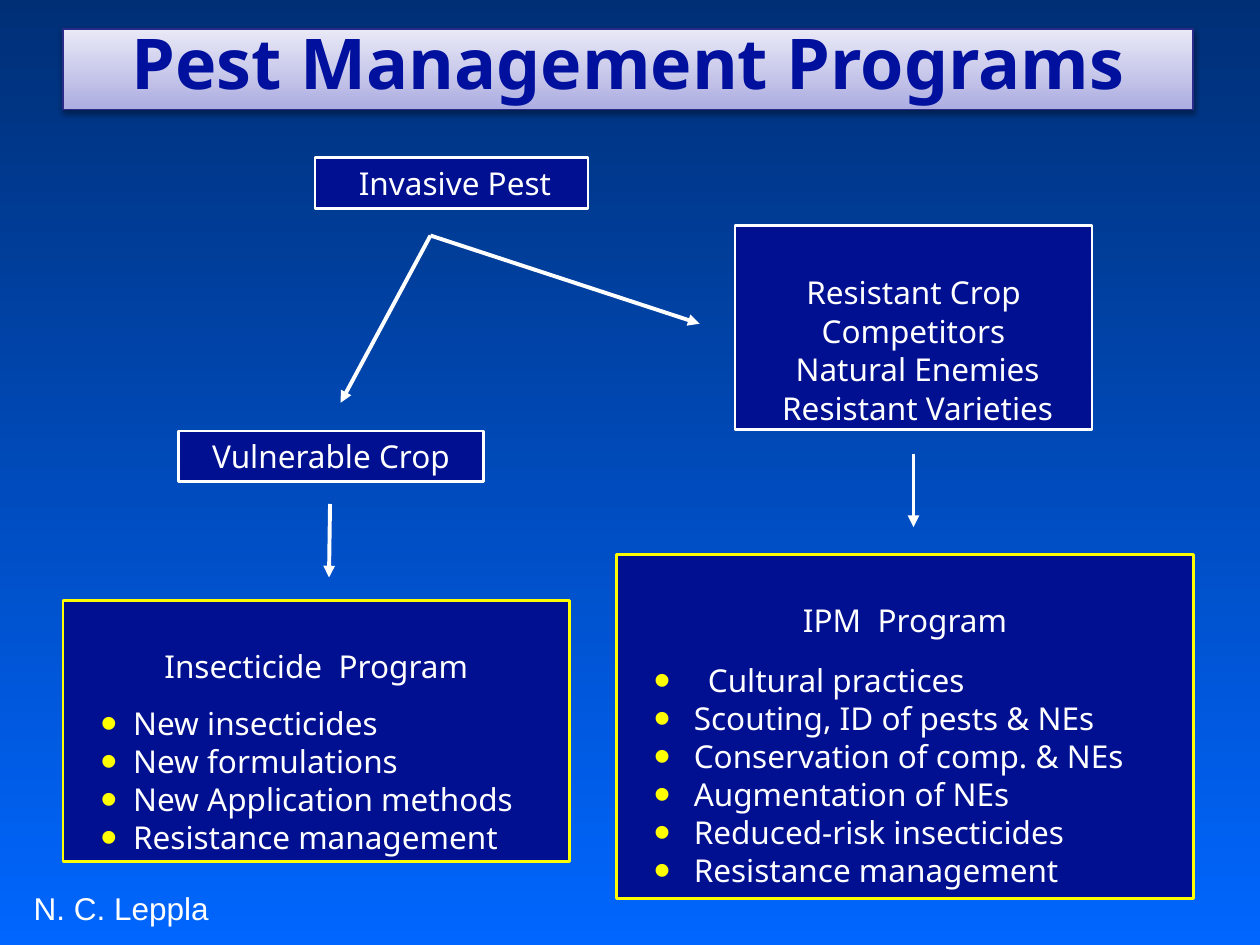
from lxml import etree
from pptx import Presentation
from pptx.dml.color import RGBColor
from pptx.enum import shapes, text
from pptx.oxml import ns
from pptx.util import Pt

WHITE = RGBColor(0xFF, 0xFF, 0xFF)
YELLOW = RGBColor(0xFF, 0xFF, 0x00)
NAVY = RGBColor(0x01, 0x0F, 0x91)
TITLE_BLUE = RGBColor(0x01, 0x10, 0x9D)
TITLE_EDGE = RGBColor(0x2A, 0x2A, 0x89)
TITLE_FADE = RGBColor(0xAD, 0xAD, 0xE1), RGBColor(0xE9, 0xE9, 0xF7)
PAGE_FADE = RGBColor(0x00, 0x2F, 0x76), RGBColor(0x00, 0x66, 0xFF)
BODY = dict(name="Noto Sans", size=Pt(18))
INSET = 7.2
LEAD = 21.7
BULLET_INDENT = 14.4

# Content: places are left, top, width, height in points
TITLE = "Pest Management Programs"
TITLE_PLACE = (36, 16.6, 645.8, 46)
AUTHOR = "N. C. Leppla"
AUTHOR_PLACE = (12.2, 504.7, 120, 29)
LABELS = [
    ("Invasive Pest", (180, 90, 156, 29), 25),
    ("Vulnerable Crop", (102.2, 246.2, 174, 29), None),
]
DEFENCES = ["Resistant Crop", "Competitors", " Natural Enemies", " Resistant Varieties"]
DEFENCES_PLACE = (420, 128.7, 204, 116.6)
PROGRAMS = [
    dict(heading="IPM  Program", place=(352.2, 317, 329.8, 196.4),
         margin=37.2, gap=12.6, first_shift=8,
         items=["Cultural practices", "Scouting, ID of pests & NEs",
                "Conservation of comp. & NEs", "Augmentation of NEs",
                "Reduced-risk insecticides", "Resistance management"]),
    dict(heading="Insecticide  Program", place=(36, 343.2, 289.4, 149.2),
         margin=33, gap=10.9, first_shift=0,
         items=["New insecticides", "New formulations",
                "New Application methods", "Resistance management"]),
]
ARROWS = [
    ((246, 134.6), (194.6, 230.2)),
    ((246, 134.6), (399.8, 185)),
    ((188.6, 288), (188, 330)),
    ((522, 259.2), (522, 301.2)),
]


def add_xml(parent, tag, **attributes):
    node = etree.SubElement(parent, ns.qn(tag))
    for key, value in attributes.items():
        node.set(key, str(value))
    return node


def set_all(target, values):
    for key, value in values.items():
        setattr(target, key, value)


def place(box, spot):
    set_all(box, dict(zip(("left", "top", "width", "height"), map(Pt, spot))))


def fade(fill, colors, angle):
    fill.gradient()
    fill.gradient_angle = angle
    for stop, color in zip(fill.gradient_stops, colors):
        stop.color.rgb = color


def frame_format(box, anchor, top=3.6, left=INSET):
    set_all(box.text_frame, dict(
        word_wrap=True, vertical_anchor=anchor, margin_top=Pt(top),
        margin_bottom=Pt(3.6), margin_left=Pt(left), margin_right=Pt(INSET)))


def write(para, words, align, color=WHITE, font=BODY, **spacing):
    set_all(para, dict(alignment=align, **spacing))
    span = para.add_run()
    span.text = words
    set_all(span.font, font)
    span.font.color.rgb = color


def add_box(spot, edge):
    box = page.shapes.add_shape(shapes.MSO_SHAPE.RECTANGLE, *map(Pt, spot))
    box.shadow.inherit = False
    box.fill.solid()
    box.fill.fore_color.rgb = NAVY
    box.line.color.rgb = edge
    box.line.width = Pt(1.5)
    return box


def next_para(frame, index):
    return frame.add_paragraph() if index else frame.paragraphs[0]


def add_bullet(para, margin):
    props = para._p.get_or_add_pPr()
    props.set("marL", str(Pt(margin)))
    props.set("indent", str(Pt(BULLET_INDENT - margin)))
    add_xml(add_xml(props, "a:buClr"), "a:srgbClr", val=YELLOW)
    add_xml(props, "a:buSzPct", val=150000)
    add_xml(props, "a:buFont", typeface="Arial")
    add_xml(props, "a:buChar", char="•")


deck = Presentation()
deck.slide_width, deck.slide_height = Pt(720), Pt(540)
page = deck.slides.add_slide(deck.slide_layouts[5])
fade(page.background.fill, PAGE_FADE, 270)
CENTER, LEFT = text.PP_ALIGN.CENTER, text.PP_ALIGN.LEFT
TOP, MIDDLE = text.MSO_ANCHOR.TOP, text.MSO_ANCHOR.MIDDLE

# Title bar with a soft shadow
title = page.shapes.title
place(title, TITLE_PLACE)
fade(title.fill, TITLE_FADE, 90)
title.line.color.rgb = TITLE_EDGE
title.line.width = Pt(0.75)
frame_format(title, MIDDLE)
title.text_frame.auto_size = text.MSO_AUTO_SIZE.NONE
write(title.text_frame.paragraphs[0], TITLE, CENTER, TITLE_BLUE,
      dict(name="Noto Sans", size=Pt(40), bold=True), line_spacing=0.8)
effects = add_xml(title._element.spPr, "a:effectLst")
shadow = add_xml(effects, "a:outerShdw", blurRad=Pt(3.1), dist=Pt(1.6),
                 dir=5400000, rotWithShape=0)
add_xml(add_xml(shadow, "a:srgbClr", val="000000"), "a:alpha", val=38000)

# One-line labels
for words, spot, left in LABELS:
    box = add_box(spot, WHITE)
    frame_format(box, MIDDLE, left=left or INSET)
    write(box.text_frame.paragraphs[0], words, LEFT if left else CENTER)

# Crop defences
box = add_box(DEFENCES_PLACE, WHITE)
frame_format(box, TOP, top=27)
for index, words in enumerate(DEFENCES):
    write(next_para(box.text_frame, index), words, CENTER, line_spacing=Pt(22))

# Program boxes: heading and bullets
for program in PROGRAMS:
    box = add_box(program["place"], YELLOW)
    frame_format(box, TOP, top=26.5)
    write(box.text_frame.paragraphs[0], program["heading"], CENTER,
          line_spacing=Pt(LEAD))
    for index, words in enumerate(program["items"]):
        para = box.text_frame.add_paragraph()
        first = index == 0
        add_bullet(para, program["margin"] + first * program["first_shift"])
        write(para, words, LEFT, line_spacing=Pt(LEAD),
              space_before=Pt(first * program["gap"]))

# Arrows
for start, end in ARROWS:
    arrow = page.shapes.add_connector(
        shapes.MSO_CONNECTOR.STRAIGHT, *map(Pt, start + end))
    arrow.line.color.rgb = WHITE
    arrow.line.width = Pt(2.25)
    add_xml(arrow.line._get_or_add_ln(), "a:tailEnd", type="triangle")
    add_xml(arrow._element.spPr, "a:effectLst")

# Author
author = page.shapes.add_textbox(*map(Pt, AUTHOR_PLACE))
frame_format(author, TOP)
write(author.text_frame.paragraphs[0], AUTHOR, LEFT,
      font=dict(name="Arial", size=Pt(18)))

deck.save("out.pptx")
